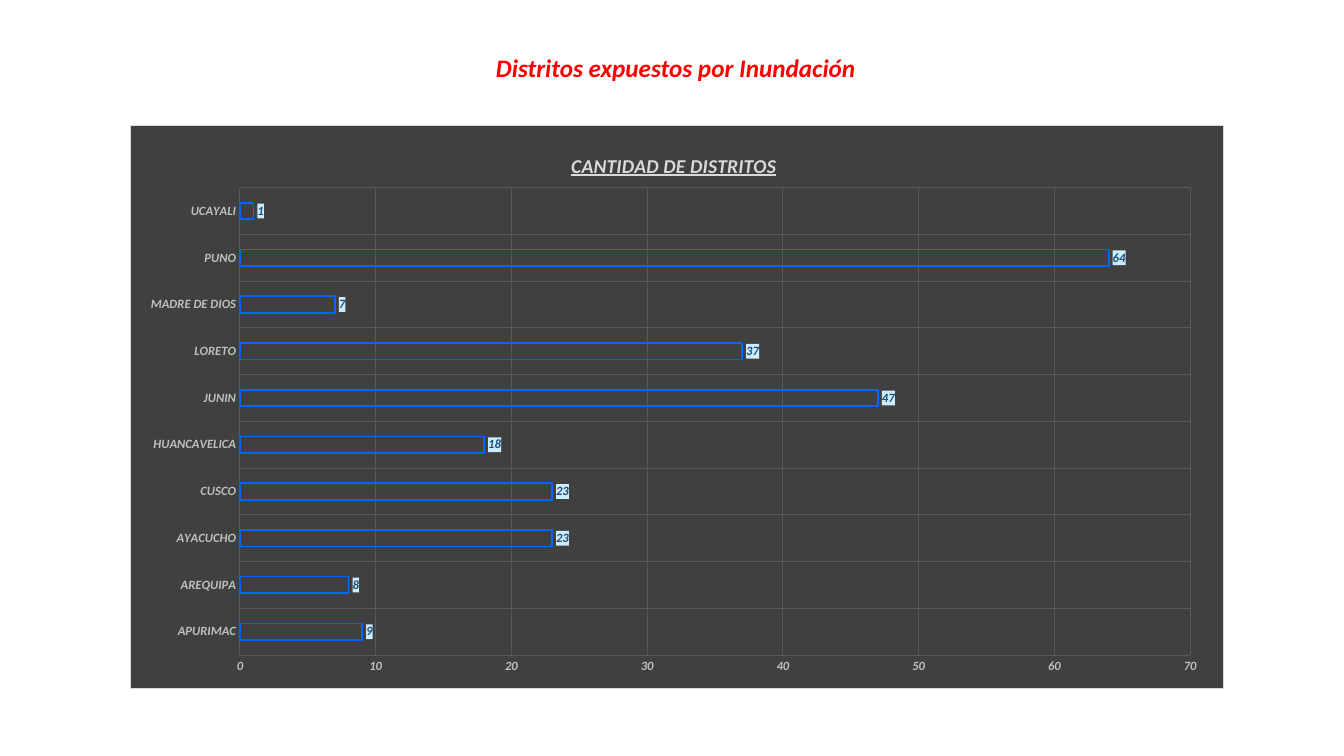
from lxml import etree
from pptx import Presentation
from pptx.chart import data
from pptx.dml import color
from pptx.enum import chart as kinds, text
from pptx.oxml import ns
from pptx.util import Pt

FONT = "Calibri"
DISTRICTS = {
    "APURIMAC": 9, "AREQUIPA": 8, "AYACUCHO": 23, "CUSCO": 23,
    "HUANCAVELICA": 18, "JUNIN": 47, "LORETO": 37,
    "MADRE DE DIOS": 7, "PUNO": 64, "UCAYALI": 1,
}


def rgb(value):
    """Turn a hex string into a colour."""
    return color.RGBColor.from_string(value)


def format_font(font, size, fill, underline=False):
    """Apply the slide's bold italic style to a font."""
    font.name, font.size = FONT, Pt(size)
    font.bold = font.italic = True
    font.underline = underline
    font.color.rgb = rgb(fill)


def write_text(frame, content, **style):
    """Write one centred, formatted line into a text frame."""
    paragraph = frame.paragraphs[0]
    paragraph.alignment = text.PP_ALIGN.CENTER
    run = paragraph.add_run()
    run.text = content
    format_font(run.font, **style)


def make_shape_properties(fill, border=None):
    """Return chart shape properties with a solid fill and optional border."""
    properties = etree.Element(ns.qn("c:spPr"), nsmap={"a": ns.nsuri("a"), "c": ns.nsuri("c")})
    parents = [(properties, fill)]
    if border:
        parents.append((etree.Element(ns.qn("a:ln"), w=str(Pt(0.75))), border))
    for parent, value in parents:
        solid = etree.SubElement(parent, ns.qn("a:solidFill"))
        etree.SubElement(solid, ns.qn("a:srgbClr"), val=value)
        if parent is not properties:
            properties.append(parent)
    return properties


def set_layout(element, index, inner=False, **fractions):
    """Place a chart part by fractions of the chart's size."""
    for layout in element.findall(ns.qn("c:layout")):
        element.remove(layout)
    layout = etree.Element(ns.qn("c:layout"))
    manual = etree.SubElement(layout, ns.qn("c:manualLayout"))
    if inner:
        etree.SubElement(manual, ns.qn("c:layoutTarget"), val="inner")
    for name in ("x", "y"):
        etree.SubElement(manual, ns.qn(f"c:{name}Mode"), val="edge")
    for name, value in fractions.items():
        etree.SubElement(manual, ns.qn(f"c:{name}"), val=str(value))
    element.insert(index, layout)


def format_axis(axis):
    """Give an axis grey labels and thin gridlines."""
    axis.major_tick_mark = axis.minor_tick_mark = kinds.XL_TICK_MARK.NONE
    axis.format.line.fill.background()
    axis.has_major_gridlines = True
    grid = axis.major_gridlines.format.line
    grid.color.rgb, grid.width = rgb("595959"), Pt(0.75)
    format_font(axis.tick_labels.font, 9, "BFBFBF")


def format_bars(plot):
    """Outline the bars and label their values."""
    plot.gap_width, plot.overlap, plot.vary_by_categories = 182, -50, False
    series = plot.series[0]
    series.format.fill.background()
    series.format.line.color.rgb = rgb("0066FF")
    series.format.line.width = Pt(1.25)
    labels = series.data_labels
    labels.show_value = True
    labels.position = kinds.XL_LABEL_POSITION.OUTSIDE_END
    labels.number_format, labels.number_format_is_linked = "#,##0", False
    format_font(labels.font, 9, "1F4E79")
    label_text = labels._element.find(ns.qn("c:txPr"))
    label_text.addprevious(make_shape_properties("CCECFF"))


def add_heading(slide, left, top, width, height):
    """Place the slide title in its box."""
    title = slide.shapes.title
    title.left, title.top, title.width, title.height = map(Pt, (left, top, width, height))
    title.text_frame.word_wrap = False
    title.text_frame.vertical_anchor = text.MSO_ANCHOR.MIDDLE
    write_text(title.text_frame, "Distritos expuestos por Inundación", size=18, fill="FF0000")


def add_district_chart(slide, left, top, width, height):
    """Draw the bar chart of districts in its box."""
    values = data.CategoryChartData(number_format="#,##0")
    values.categories = list(DISTRICTS)
    values.add_series("Series 1", list(DISTRICTS.values()))
    box = map(Pt, (left, top, width, height))
    chart = slide.shapes.add_chart(kinds.XL_CHART_TYPE.BAR_CLUSTERED, *box, values).chart
    chart.has_legend = False
    chart.font.name, chart.font.size = FONT, Pt(10)
    chart.has_title = True
    write_text(chart.chart_title.text_frame, "CANTIDAD DE DISTRITOS",
               size=14, fill="D9D9D9", underline=True)
    chart.chart_title.include_in_layout = False
    format_axis(chart.category_axis)
    format_axis(chart.value_axis)
    chart.value_axis.minimum_scale, chart.value_axis.maximum_scale = 0, 70
    chart.value_axis.major_unit = 10
    format_bars(chart.plots[0])
    space = chart._chartSpace
    set_layout(chart.chart_title._element, 1, x=0.4, y=0.04)
    set_layout(space.chart.plotArea, 0, inner=True, x=0.1, y=0.11, w=0.87, h=0.83)
    space.chart.addnext(make_shape_properties("404040", "D9D9D9"))


def main():
    """Build and save the presentation."""
    presentation = Presentation()
    presentation.slide_width, presentation.slide_height = Pt(960), Pt(540)
    slide = presentation.slides.add_slide(presentation.slide_layouts[5])
    add_heading(slide, 345.5, 34, 274.5, 29)
    add_district_chart(slide, 93, 89.5, 781, 403)
    presentation.save("out.pptx")


if __name__ == "__main__":
    main()
